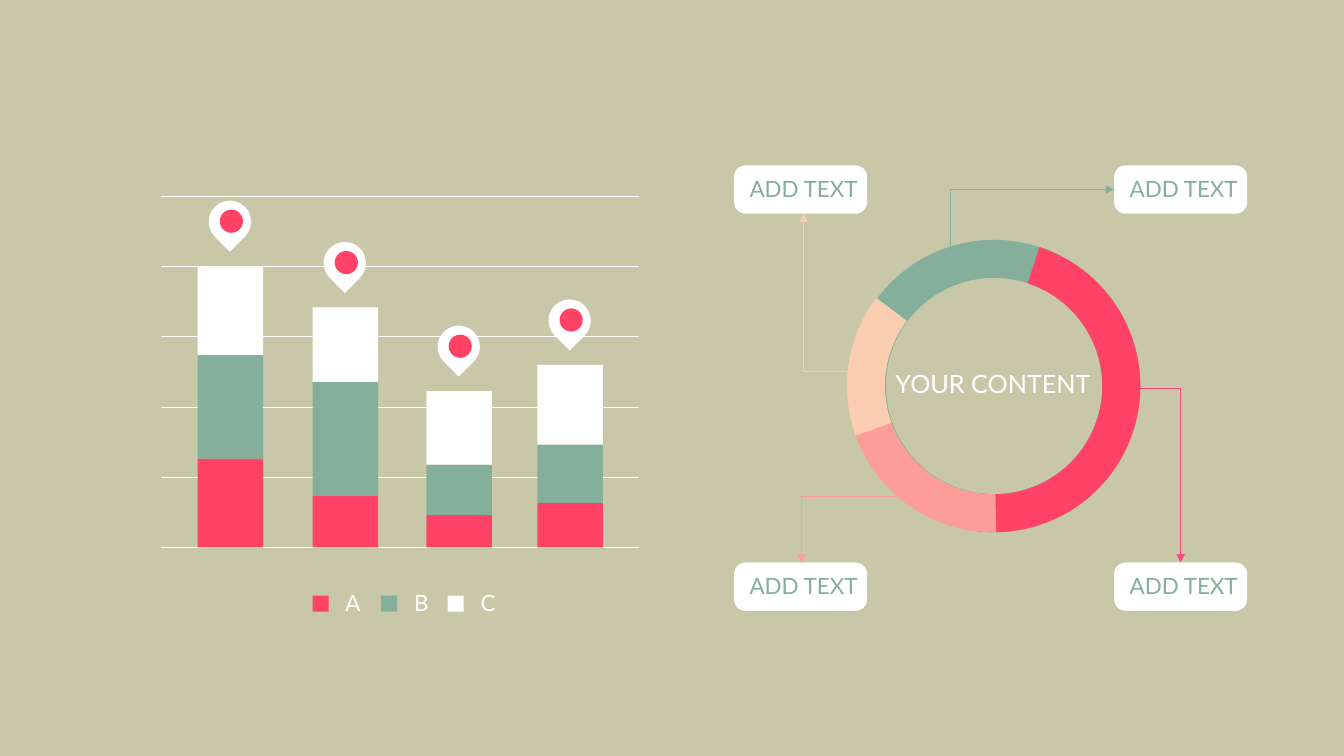
from lxml import etree
from pptx import Presentation
from pptx.dml.color import RGBColor
from pptx.enum import shapes, text
from pptx.oxml import ns
from pptx.util import Inches, Pt

KIND = shapes.MSO_SHAPE
SAND, WHITE, RED, GREEN = "C8C7A8", "FFFFFF", "FF4266", "84AF9B"
PINK, PEACH, ROSE = "FC9D99", "FACDB0", "FC4A7E"
BASE = 5.43

# left edge, then the top of the red, green and white part
BARS = [
    (1.96, 4.55, 3.52, 2.64),
    (3.1, 4.92, 3.79, 3.05),
    (4.23, 5.11, 4.61, 3.88),
    (5.33, 4.99, 4.41, 3.62),
]
# left edge, rotation, start angle, colour
ARCS = [
    (8.41, 285, 1.84, RED),
    (8.4, 0, 53.25, PINK),
    (8.4, 45, 69.08, PEACH),
]
# colour, then start, corner and arrow tip
LINKS = [
    (GREEN, (9.43, 2.48), (9.43, 1.88), (11.05, 1.88)),
    (PEACH, (8.41, 3.68), (7.97, 3.68), (7.97, 2.12)),
    (PINK, (8.92, 4.92), (7.95, 4.92), (7.95, 5.58)),
    (ROSE, (11.3, 3.85), (11.71, 3.85), (11.71, 5.58)),
]
KEYS = [(3.1, RED, "A"), (3.78, GREEN, "B"), (4.44, WHITE, "C")]


def tint(fmt, color):
    fmt.solid()
    fmt.fore_color.rgb = RGBColor.from_string(color)


def shape(slide, kind, x, y, w, h, color, turn=0, adjust=()):
    item = slide.shapes.add_shape(kind, Inches(x), Inches(y), Inches(w), Inches(h))
    tint(item.fill, color)
    item.line.fill.background()
    item.shadow.inherit = False
    item.rotation = turn
    for i, value in enumerate(adjust):
        item.adjustments[i] = value


def label(slide, words, x, y, w, h, size, color):
    frame = slide.shapes.add_textbox(Inches(x), Inches(y), Inches(w), Inches(h)).text_frame
    frame.word_wrap = True
    frame.margin_left = frame.margin_right = 0
    frame.text = words
    para = frame.paragraphs[0]
    para.alignment = text.PP_ALIGN.CENTER
    font = para.runs[0].font
    font.name, font.size = "Lato", Pt(size)
    font.color.rgb = RGBColor.from_string(color)


def line(slide, start, end, color, arrow=False):
    ends = [Inches(v) for v in (*start, *end)]
    item = slide.shapes.add_connector(shapes.MSO_CONNECTOR.STRAIGHT, *ends)
    item.line.width = Pt(0.5)
    tint(item.line.fill, color)
    props = item._element.spPr
    if arrow:
        etree.SubElement(props.find(ns.qn("a:ln")), ns.qn("a:tailEnd"), type="triangle")
    etree.SubElement(props, ns.qn("a:effectLst"))


def ring(slide):
    label(slide, "YOUR CONTENT", 8.7, 3.6, 2.3, 0.4, 18, WHITE)
    shape(slide, KIND.DONUT, 8.41, 2.38, 2.9, 2.9, GREEN, adjust=[0.13])
    for x, turn, start, color in ARCS:
        shape(slide, KIND.BLOCK_ARC, x, 2.38, 2.9, 2.9, color, turn, [start, 103.22, 0.13])
    for y in (1.64, 5.58):
        for x in (7.28, 11.05):
            shape(slide, KIND.ROUNDED_RECTANGLE, x, y, 1.32, 0.48, WHITE, adjust=[0.24])
            label(slide, "ADD TEXT", x - 0.05, y + 0.05, 1.48, 0.37, 16, GREEN)
    for color, start, bend, tip in LINKS:
        line(slide, start, bend, color)
        line(slide, bend, tip, color, arrow=True)


def bars(slide):
    for i in range(6):
        y = BASE - i * 3.48 / 5
        line(slide, (1.6, y), (6.34, y), WHITE)
    for x, *tops in BARS:
        foot = BASE
        for top, color in zip(tops, (RED, GREEN, WHITE)):
            shape(slide, KIND.RECTANGLE, x, top, 0.65, foot - top, color)
            foot = top
        pin = foot - 0.65
        shape(slide, KIND.TEAR, x + 0.11, pin, 0.42, 0.42, WHITE, turn=135)
        shape(slide, KIND.OVAL, x + 0.22, pin + 0.09, 0.23, 0.23, RED)


def legend(slide):
    for x, color, name in KEYS:
        shape(slide, KIND.RECTANGLE, x, 5.91, 0.16, 0.16, color)
        label(slide, name, x + 0.25, 5.8, 0.3, 0.37, 16, WHITE)


def main():
    deck = Presentation()
    deck.slide_width, deck.slide_height = Inches(13.33), Inches(7.5)
    slide = deck.slides.add_slide(deck.slide_layouts[6])
    tint(slide.background.fill, SAND)
    ring(slide)
    bars(slide)
    legend(slide)
    deck.save("out.pptx")


if __name__ == "__main__":
    main()
